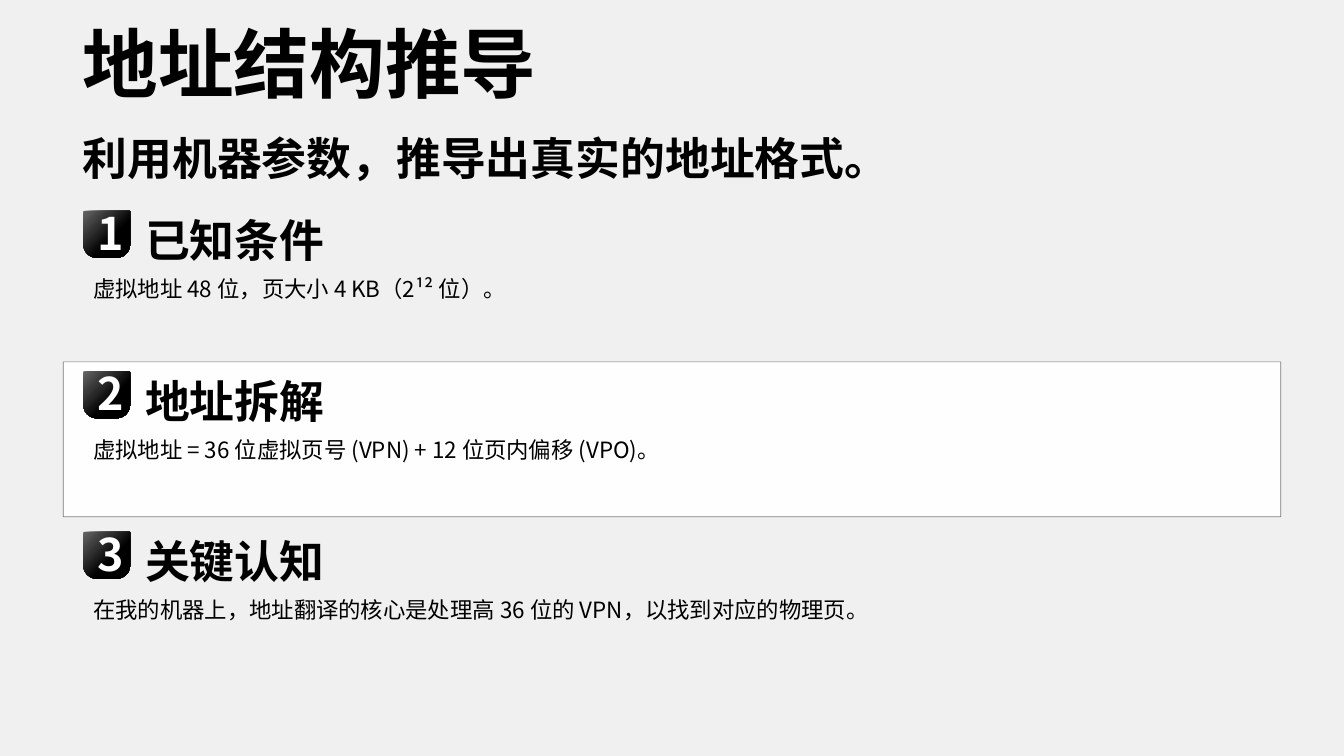
"""Build the slide that derives the address layout in three numbered steps."""
from dataclasses import dataclass
from typing import NamedTuple, Optional

from lxml.etree import SubElement
from pptx import Presentation
from pptx.dml.color import RGBColor as Color
from pptx.enum.shapes import MSO_SHAPE as ShapeKind
from pptx.enum.text import MSO_ANCHOR as Anchor, PP_ALIGN as Align
from pptx.oxml.ns import qn
from pptx.shapes.autoshape import Shape
from pptx.slide import Slide
from pptx.util import Pt


@dataclass(frozen=True)
class Theme:
    font: str = "Noto Sans CJK SC"
    background: Color = Color(0xF0, 0xF0, 0xF0)
    ink: Color = Color(0, 0, 0)
    paper: Color = Color(255, 255, 255)
    badge_light: Color = Color(0x66, 0x66, 0x66)
    title_size: float = 54
    heading_size: float = 32
    body_size: float = 16


class Box(NamedTuple):
    left: float
    top: float
    width: float
    height: float


class Step(NamedTuple):
    heading: str
    body: str


THEME = Theme()
TITLE_BOX = Box(52, 10, 855.5, 70.5)
SUBTITLE_BOX = Box(52, 89.5, 855.5, 46.5)
HIGHLIGHT_BOX = Box(45.2, 258.5, 869.6, 110.7)
FIRST_STEP_TOP = 149.2
STEP_PITCH = 114.6
STEPS = (
    Step("已知条件", "虚拟地址 48 位，页大小 4 KB（2¹² 位）。"),
    Step("地址拆解", "虚拟地址 = 36 位虚拟页号 (VPN) + 12 位页内偏移 (VPO)。"),
    Step("关键认知", "在我的机器上，地址翻译的核心是处理高 36 位的 VPN，以找到对应的物理页。"),
)


def write(shape: Shape, text: str, size: float, color: Color = THEME.ink,
          bold: bool = True, anchor: Anchor = Anchor.MIDDLE,
          align: Align = Align.LEFT, spacing: Optional[float] = None) -> None:
    text_frame = shape.text_frame
    text_frame.text = text
    text_frame.word_wrap = True
    text_frame.vertical_anchor = anchor
    paragraph = text_frame.paragraphs[0]
    paragraph.alignment = align
    paragraph.line_spacing = spacing
    for run in paragraph.runs:
        run.font.size = Pt(size)
        run.font.bold = bold
        run.font.color.rgb = color
        run.font.name = THEME.font
        SubElement(run.font._element, qn("a:ea"), typeface=THEME.font)


def add_text_box(slide: Slide, box: Box) -> Shape:
    return slide.shapes.add_textbox(*map(Pt, box))


def add_plain_shape(slide: Slide, kind: ShapeKind, box: Box) -> Shape:
    shape = slide.shapes.add_shape(kind, *map(Pt, box))
    shape.shadow.inherit = False
    shape.fill.background()
    shape.line.fill.background()
    return shape


def set_opacity(shape_properties, percent: int) -> None:
    color = shape_properties.find(qn("a:solidFill"))[0]
    SubElement(color, qn("a:alpha"), val=str(percent * 1000))


def add_highlight(slide: Slide) -> None:
    shape = add_plain_shape(slide, ShapeKind.RECTANGLE, HIGHLIGHT_BOX)
    shape.fill.solid()
    shape.fill.fore_color.rgb = THEME.paper
    shape.line.color.rgb = THEME.ink
    shape.line.width = Pt(0.5)
    properties = shape._element.spPr
    set_opacity(properties, 95)
    set_opacity(properties.find(qn("a:ln")), 50)


def add_badge(slide: Slide, number: int, top: float) -> None:
    shape = add_plain_shape(slide, ShapeKind.ROUND_2_SAME_RECTANGLE,
                            Box(59.5, top + 1.5, 33.5, 33.5))
    shape.adjustments[0] = 0
    shape.adjustments[1] = 0.29
    shape.fill.gradient()
    shape.fill.gradient_angle = 315
    stops = zip(shape.fill.gradient_stops,
                ((0, THEME.badge_light), (0.6, THEME.ink)))
    for stop, (position, color) in stops:
        stop.position = position
        stop.color.rgb = color
    write(shape, str(number), THEME.heading_size, THEME.paper, align=Align.CENTER)


def add_step(slide: Slide, number: int, step: Step) -> None:
    top = FIRST_STEP_TOP + (number - 1) * STEP_PITCH
    body = add_text_box(slide, Box(59.5, top + 40.3, 837.5, 60))
    write(body, step.body, THEME.body_size, bold=False, anchor=Anchor.TOP, spacing=1.2)
    heading = add_plain_shape(slide, ShapeKind.PLAQUE, Box(96.6, top, 800.4, 36.5))
    heading.adjustments[0] = 0
    write(heading, step.heading, THEME.heading_size, spacing=1.2)
    add_badge(slide, number, top)


def main() -> None:
    presentation = Presentation()
    presentation.slide_width = Pt(960)
    presentation.slide_height = Pt(540)
    slide = presentation.slides.add_slide(presentation.slide_layouts[6])
    slide.background.fill.solid()
    slide.background.fill.fore_color.rgb = THEME.background
    add_highlight(slide)
    write(add_text_box(slide, SUBTITLE_BOX), "利用机器参数，推导出真实的地址格式。",
          THEME.heading_size)
    for number, step in enumerate(STEPS, start=1):
        add_step(slide, number, step)
    write(add_text_box(slide, TITLE_BOX), "地址结构推导", THEME.title_size,
          anchor=Anchor.BOTTOM)
    presentation.save("out.pptx")


if __name__ == "__main__":
    main()
